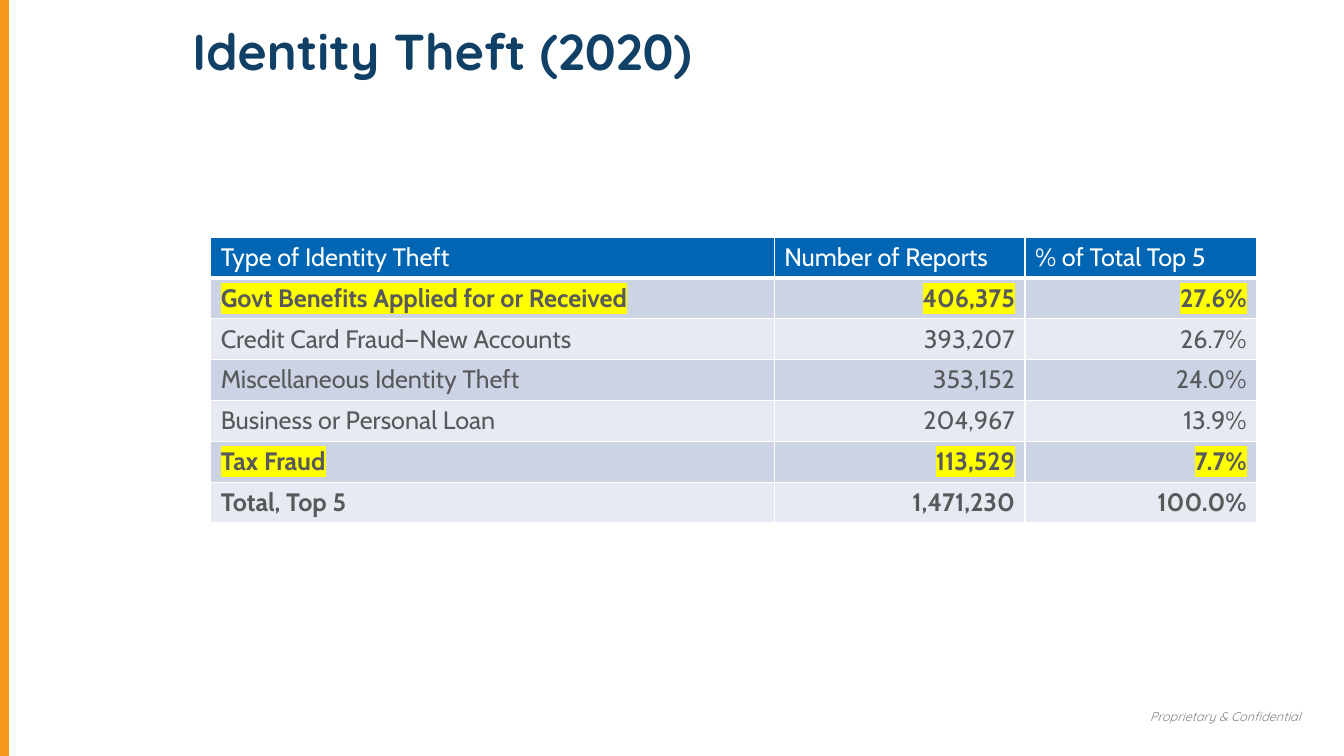
from lxml import etree
from pptx import Presentation
from pptx import util as u
from pptx.dml import color
from pptx.enum import shapes, text
from pptx.oxml import ns

WHITE, YELLOW, GRAY = "FFFFFF", "FFFF00", "58595B"
HEADER_FILL, BAND_FILLS = "0066B3", ("CCD3E5", "E7EAF2")
ALIGN = text.PP_ALIGN

ROWS = [
    ("Type of Identity Theft", "Number of Reports", "% of Total Top 5"),
    ("Govt Benefits Applied for or Received", "406,375", "27.6%"),
    ("Credit Card Fraud—New Accounts", "393,207", "26.7%"),
    ("Miscellaneous Identity Theft", "353,152", "24.0%"),
    ("Business or Personal Loan", "204,967", "13.9%"),
    ("Tax Fraud", "113,529", "7.7%"),
    ("Total, Top 5", "1,471,230", "100.0%"),
]
HIGHLIGHTED = {1, 5}
BOLD = HIGHLIGHTED | {6}


def rgb(value):
    return color.RGBColor.from_string(value)


class Deck:
    """Draws styled elements on the current slide."""

    def __init__(self, prs):
        self.heading_font, self.body_font = "Quicksand", "Cabin"
        self.s = prs.slides.add_slide(prs.slide_layouts[6])

    def set_text(self, tf, words, font, size, fill, bold=False, italic=False,
                 align=ALIGN.LEFT, highlight=None):
        tf.text = words
        p = tf.paragraphs[0]
        p.alignment = align
        r = p.runs[0]
        r.font.name, r.font.size = font, u.Pt(size)
        r.font.bold, r.font.italic = bold, italic
        r.font.color.rgb = rgb(fill)
        if highlight:
            mark = etree.Element(ns.qn("a:highlight"))
            etree.SubElement(mark, ns.qn("a:srgbClr"), val=highlight)
            r._r.rPr.find(ns.qn("a:solidFill")).addnext(mark)

    def text_box(self, box, words, size, fill, anchor=text.MSO_ANCHOR.TOP,
                 bottom=0.13, **style):
        sp = self.s.shapes.add_textbox(*map(u.Cm, box))
        tf = sp.text_frame
        tf.word_wrap = True
        tf.vertical_anchor = anchor
        tf.margin_bottom = u.Cm(bottom)
        self.set_text(tf, words, self.heading_font, size, fill, **style)

    def line(self, start, end, fill, width):
        sp = self.s.shapes.add_connector(
            shapes.MSO_CONNECTOR.STRAIGHT, *map(u.Cm, start + end))
        sp.line.color.rgb = rgb(fill)
        sp.line.width = u.Pt(width)
        etree.SubElement(sp._element.spPr, ns.qn("a:effectLst"))

    def border(self, cell, bottom):
        tcPr = cell._tc.get_or_add_tcPr()
        for side, width in zip("LRTB", (1, 1, 1, bottom)):
            ln = etree.SubElement(tcPr, ns.qn(f"a:ln{side}"), w=str(u.Pt(width)))
            solid = etree.SubElement(ln, ns.qn("a:solidFill"))
            etree.SubElement(solid, ns.qn("a:srgbClr"), val=WHITE)

    def table(self, left, top, widths, row_height, rows):
        frame = self.s.shapes.add_table(
            len(rows), len(widths), u.Cm(left), u.Cm(top),
            u.Cm(sum(widths)), u.Cm(row_height * len(rows)))
        table = frame.table
        for column, width in zip(table.columns, widths):
            column.width = u.Cm(width)
        for i, row in enumerate(rows):
            table.rows[i].height = u.Cm(row_height)
            header = i == 0
            for j, words in enumerate(row):
                cell = table.cell(i, j)
                self.border(cell, 3 if header else 1)
                cell.fill.solid()
                cell.fill.fore_color.rgb = rgb(
                    HEADER_FILL if header else BAND_FILLS[(i - 1) % 2])
                self.set_text(
                    cell.text_frame, words, self.body_font, 18,
                    WHITE if header else GRAY, bold=i in BOLD,
                    align=ALIGN.LEFT if header or j == 0 else ALIGN.RIGHT,
                    highlight=YELLOW if i in HIGHLIGHTED else None)


def main():
    prs = Presentation()
    prs.slide_width, prs.slide_height = u.Cm(33.87), u.Cm(19.05)
    deck = Deck(prs)
    deck.text_box((27.86, 17.55, 5.16, 1.22), "Proprietary & Confidential", 9,
                  "808285", anchor=text.MSO_ANCHOR.BOTTOM, bottom=0.52,
                  italic=True, align=ALIGN.RIGHT)
    deck.line((0.08, 0), (0.08, 19.05), "F8991D", 8)
    deck.text_box((4.6, 0.38, 28.42, 2.54), "Identity Theft (2020)", 36,
                  "114066", bold=True)
    deck.table(5.31, 5.97, (14.2, 6.32, 5.84), 1.03, ROWS)
    prs.save("out.pptx")


if __name__ == "__main__":
    main()
